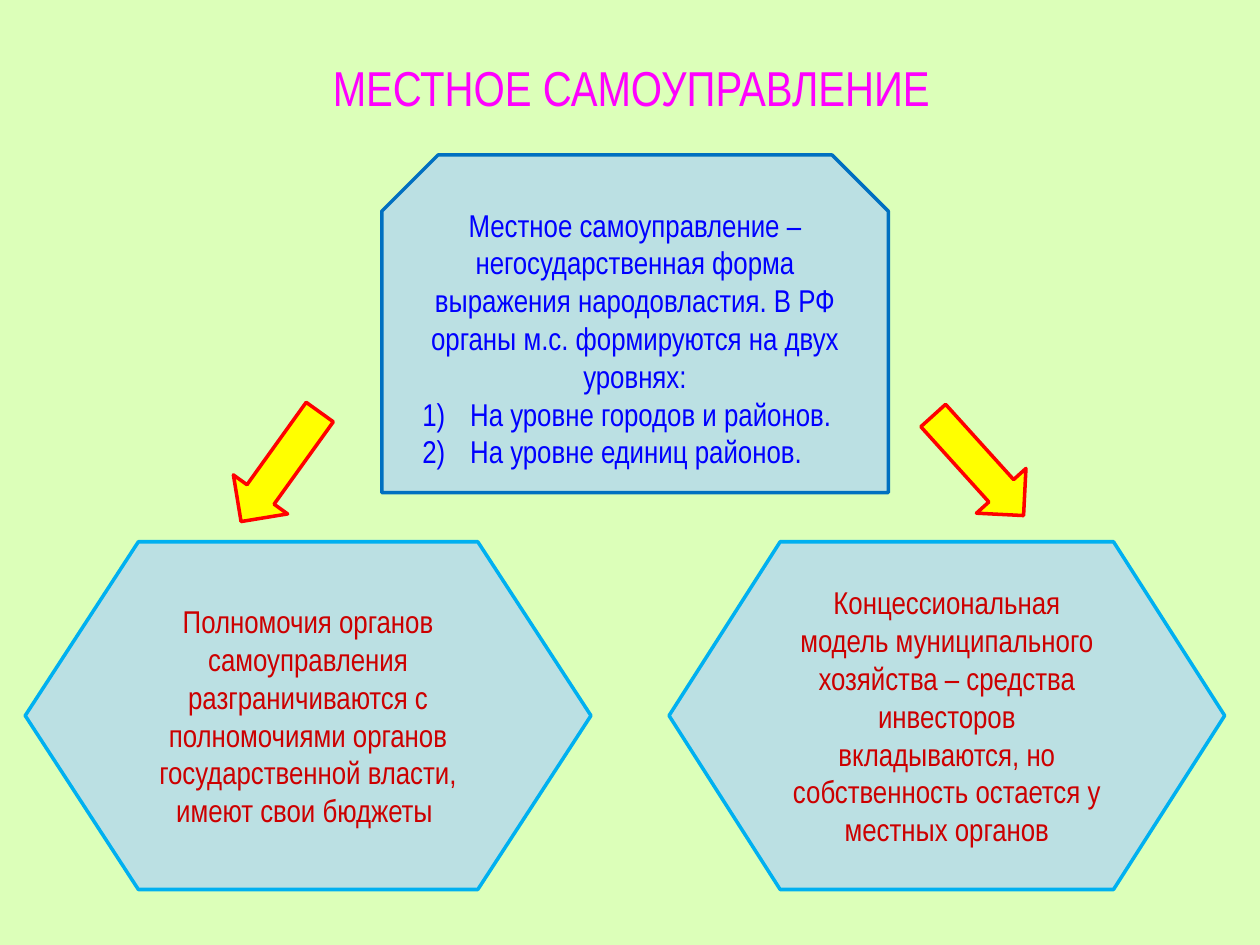
from lxml.etree import SubElement
from pptx import Presentation
from pptx.dml.color import RGBColor
from pptx.enum.shapes import MSO_SHAPE as Shape
from pptx.enum.text import MSO_ANCHOR as Anchor, PP_ALIGN as Align
from pptx.oxml.ns import qn
from pptx.util import Inches, Pt

COLUMNS, ROWS = 100, 75
CELL = Inches(0.1)
FONT = "Arial Narrow"
PANEL = "BBE0E3"
HEXAGON_TOP, HEXAGON_HEIGHT = 43, 27.6
ARROW_SIZE = (10.7, 5.3)


def grid(*cells):
    return [round(cell * CELL) for cell in cells]


def paint(color_format, color):
    color_format.rgb = RGBColor.from_string(color)


def write(paragraph, text, size, color, align=Align.CENTER):
    paragraph.alignment = align
    run = paragraph.add_run()
    run.text = text
    run.font.size = Pt(size)
    run.font.name = FONT
    paint(run.font.color, color)


def number(paragraph):
    properties = paragraph._p.get_or_add_pPr()
    indent = Inches(0.38)
    properties.set("marL", str(indent))
    properties.set("indent", str(-indent))
    SubElement(properties, qn("a:buFont"), typeface="+mj-lt")
    SubElement(properties, qn("a:buAutoNum"), type="arabicParenR")


def add_title(slide, text):
    frame = slide.shapes.add_textbox(*grid(5.1, 2.1, 90, 9.6)).text_frame
    frame.word_wrap = True
    frame.vertical_anchor = Anchor.MIDDLE
    write(frame.paragraphs[0], text, 28, "FF00FF")


def add_figure(slide, kind, cells, fill, outline):
    figure = slide.shapes.add_shape(kind, *grid(*cells))
    figure.shadow.inherit = False
    figure.fill.solid()
    paint(figure.fill.fore_color, fill)
    paint(figure.line.color, outline)
    figure.line.width = Pt(2)
    return figure


def add_panel(slide, kind, cells, outline, text, color, levels=()):
    frame = add_figure(slide, kind, cells, PANEL, outline).text_frame
    frame.word_wrap = True
    frame.vertical_anchor = Anchor.MIDDLE
    write(frame.paragraphs[0], text, 18, color)
    for level in levels:
        item = frame.add_paragraph()
        write(item, level, 18, color, Align.LEFT)
        number(item)


def add_hexagon(slide, left, width, text):
    cells = (left, HEXAGON_TOP, width, HEXAGON_HEIGHT)
    add_panel(slide, Shape.FLOWCHART_PREPARATION, cells, "00B0F0", text, "CC0000")


def add_arrow(slide, left, top, angle):
    arrow = add_figure(slide, Shape.RIGHT_ARROW, (left, top, *ARROW_SIZE), "FFFF00", "FF0000")
    arrow.rotation = angle


def main():
    deck = Presentation()
    deck.slide_width, deck.slide_height = grid(COLUMNS, ROWS)
    slide = deck.slides.add_slide(deck.slide_layouts[6])
    slide.background.fill.solid()
    paint(slide.background.fill.fore_color, "DCFFB9")

    add_title(slide, "МЕСТНОЕ САМОУПРАВЛЕНИЕ")
    add_arrow(slide, 16.9, 34.4, 125.7)
    add_hexagon(slide, 53.1, 44.1,
                "Концессиональная модель муниципального хозяйства – средства инвесторов "
                "вкладываются, но собственность остается у местных органов")
    add_hexagon(slide, 2, 44.9,
                "Полномочия органов самоуправления разграничиваются с полномочиями органов "
                "государственной власти, имеют свои бюджеты ")
    add_arrow(slide, 72.3, 34.3, 47.9)
    add_panel(slide, Shape.SNIP_2_SAME_RECTANGLE, (30.3, 12.3, 40.2, 26.8), "0070C0",
              "Местное самоуправление – негосударственная форма выражения народовластия. "
              "В РФ органы м.с. формируются на двух уровнях:", "0000FF",
              ("На уровне городов и районов.", "На уровне единиц районов."))
    deck.save("out.pptx")


if __name__ == "__main__":
    main()
